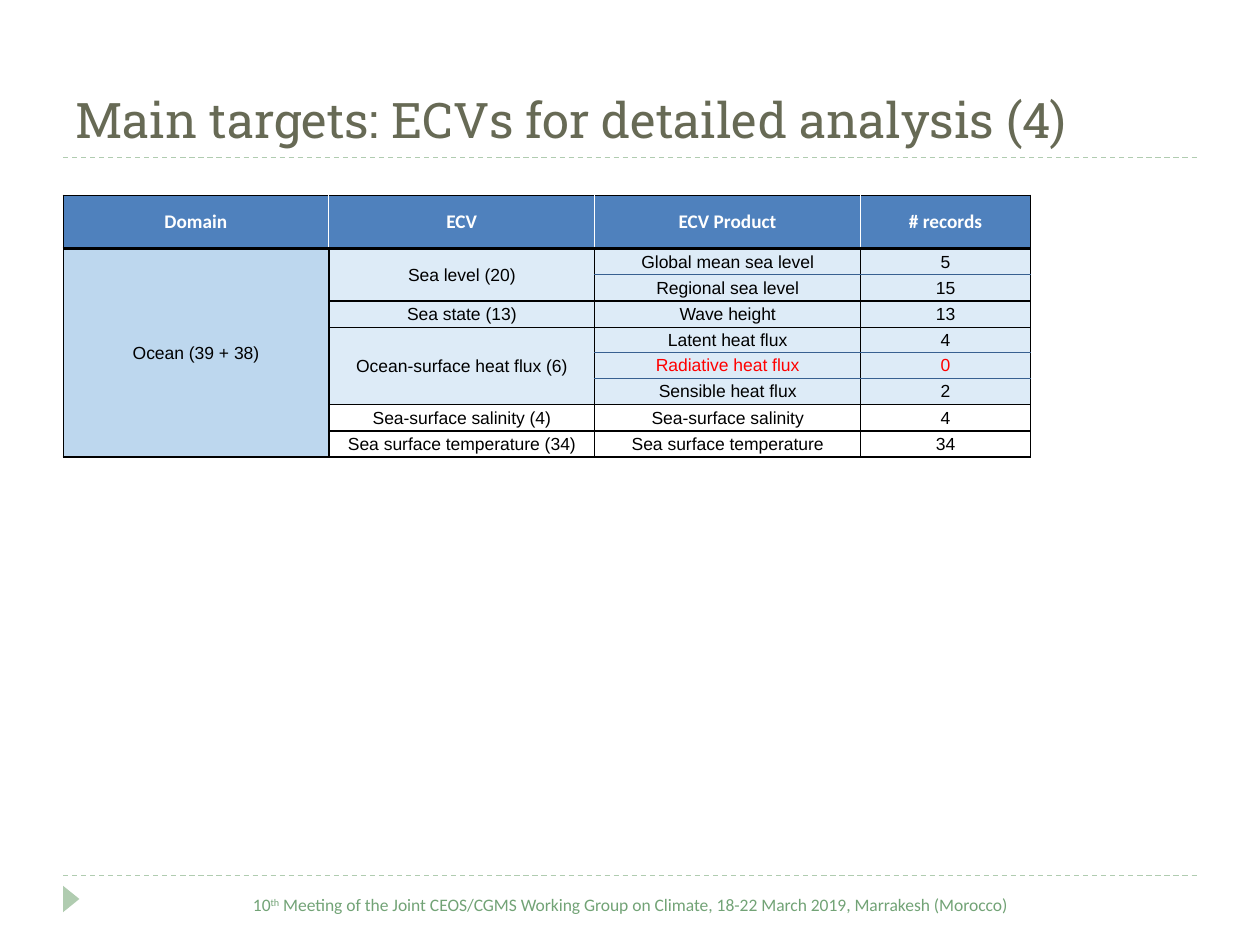
from lxml import etree
from pptx import Presentation
from pptx.dml.color import RGBColor
from pptx.enum.dml import MSO_LINE
from pptx.enum.shapes import MSO_CONNECTOR, MSO_SHAPE
from pptx.enum.text import MSO_ANCHOR, PP_ALIGN
from pptx.oxml.ns import qn
from pptx.util import Inches, Pt

STRAIGHT = MSO_CONNECTOR.STRAIGHT
TRIANGLE = MSO_SHAPE.ISOSCELES_TRIANGLE
DASH = MSO_LINE.DASH
TOP, MIDDLE, BOTTOM = MSO_ANCHOR.TOP, MSO_ANCHOR.MIDDLE, MSO_ANCHOR.BOTTOM
LEFT, CENTER = PP_ALIGN.LEFT, PP_ALIGN.CENTER

BLACK = RGBColor(0x00, 0x00, 0x00)
WHITE = RGBColor(0xFF, 0xFF, 0xFF)
RED = RGBColor(0xFF, 0x00, 0x00)
OLIVE = RGBColor(0x67, 0x6A, 0x55)
GREEN = RGBColor(0x72, 0xA3, 0x76)
PALE_GREEN = RGBColor(0xB0, 0xCC, 0xB0)
HEADER_BLUE = RGBColor(0x4F, 0x81, 0xBD)
DOMAIN_BLUE = RGBColor(0xBD, 0xD7, 0xEE)
BAND_BLUE = RGBColor(0xDD, 0xEB, 0xF7)
RULE_BLUE = RGBColor(0x37, 0x60, 0x91)

HEADERS = ["Domain", "ECV", "ECV Product", "# records"]
DOMAIN = "Ocean (39 + 38)"
GROUPS = [
    ("Sea level (20)", BAND_BLUE,
     [("Global mean sea level", "5"), ("Regional sea level", "15")]),
    ("Sea state (13)", BAND_BLUE, [("Wave height", "13")]),
    ("Ocean-surface heat flux (6)", BAND_BLUE,
     [("Latent heat flux", "4"), ("Radiative heat flux", "0"),
      ("Sensible heat flux", "2")]),
    ("Sea-surface salinity (4)", None, [("Sea-surface salinity", "4")]),
    ("Sea surface temperature (34)", None, [("Sea surface temperature", "34")]),
]
COLUMN_WIDTHS = [2.11, 2.11, 2.11, 1.35]
ROW_HEIGHTS = [0.42, 0.21, 0.21, 0.21, 0.2, 0.2, 0.21, 0.21, 0.21]


class SlideBuilder:
    formats = {
        "title": {"name": "Roboto Slab", "size": Pt(28)},
        "footer": {"name": "Calibri", "size": Pt(10)},
        "header": {"name": "Calibri", "size": Pt(11), "bold": True},
        "body": {"name": "Arial", "size": Pt(10), "bold": False},
    }

    def __init__(self, slide):
        self.slide = slide

    def add_runs(self, frame, runs, style, color, alignment):
        paragraph = frame.paragraphs[0]
        paragraph.alignment = alignment
        for text, baseline in runs:
            run = paragraph.add_run()
            run.text = text
            for name, value in self.formats[style].items():
                setattr(run.font, name, value)
            run.font.color.rgb = color
            if baseline:
                run._r.get_or_add_rPr().set("baseline", str(baseline * 1000))

    def text(self, box, runs, style, color, alignment=LEFT, anchor=TOP):
        shape = self.slide.shapes.add_textbox(*map(Inches, box))
        frame = shape.text_frame
        frame.word_wrap = True
        frame.vertical_anchor = anchor
        self.add_runs(frame, runs, style, color, alignment)

    def dashed_rule(self, left, right, top):
        connector = self.slide.shapes.add_connector(
            STRAIGHT, Inches(left), Inches(top), Inches(right), Inches(top))
        connector.line.color.rgb = PALE_GREEN
        connector.line.width = Pt(0.75)
        connector.line.dash_style = DASH
        etree.SubElement(connector._element.spPr, qn("a:effectLst"))

    def triangle(self, box, rotation):
        shape = self.slide.shapes.add_shape(TRIANGLE, *map(Inches, box))
        shape.rotation = rotation
        shape.shadow.inherit = False
        shape.fill.solid()
        shape.fill.fore_color.rgb = PALE_GREEN
        shape.line.fill.background()

    def table(self, left, top, widths, heights):
        frame = self.slide.shapes.add_table(
            len(heights), len(widths), Inches(left), Inches(top),
            Inches(sum(widths)), Inches(sum(heights)))
        table = frame.table
        table.first_row = False
        table.horz_banding = False
        for column, width in zip(table.columns, widths):
            column.width = Inches(width)
        for row, height in zip(table.rows, heights):
            row.height = Inches(height)
        return table

    def cell(self, cell, text, style, color, fill, borders):
        margins = {"margin_left": 0.01, "margin_right": 0.01,
                   "margin_top": 0.01, "margin_bottom": 0}
        for name, value in margins.items():
            setattr(cell, name, Inches(value))
        cell.vertical_anchor = MIDDLE
        self.add_runs(cell.text_frame, [(text, 0)], style, color, CENTER)
        properties = cell._tc.get_or_add_tcPr()
        for side, (border_color, width) in zip("LRTB", borders):
            line = etree.SubElement(properties, qn(f"a:ln{side}"), w=str(Pt(width)))
            solid = etree.SubElement(line, qn("a:solidFill"))
            etree.SubElement(solid, qn("a:srgbClr"), val=str(border_color))
        if fill is None:
            cell.fill.background()
        else:
            cell.fill.solid()
            cell.fill.fore_color.rgb = fill


def horizontal_border(edge, column, inner_edges):
    if edge == 1:
        return BLACK, 2
    if column > 1 and edge in inner_edges:
        return RULE_BLUE, 0.5
    return BLACK, 1


def vertical_border(edge, row):
    if row == 0 and 0 < edge < len(COLUMN_WIDTHS):
        return WHITE, 0.5
    return BLACK, 0.5 if edge == 0 else 1


def fill_table(builder, table):
    entries = [(0, column, 1, text, "header", WHITE, HEADER_BLUE)
               for column, text in enumerate(HEADERS)]
    entries.append((1, 0, len(ROW_HEIGHTS) - 1, DOMAIN, "body", BLACK, DOMAIN_BLUE))
    inner_edges = set()
    row = 1
    for name, fill, products in GROUPS:
        span = len(products)
        entries.append((row, 1, span, name, "body", BLACK, fill))
        inner_edges.update(range(row + 1, row + span))
        for product, records in products:
            color = RED if records == "0" else BLACK
            for column, text in enumerate((product, records), start=2):
                entries.append((row, column, 1, text, "body", color, fill))
            row += 1

    for row, column, span, text, style, color, fill in entries:
        cell = table.cell(row, column)
        if span > 1:
            cell.merge(table.cell(row + span - 1, column))
        borders = [vertical_border(column, row),
                   vertical_border(column + 1, row),
                   horizontal_border(row, column, inner_edges),
                   horizontal_border(row + span, column, inner_edges)]
        builder.cell(cell, text, style, color, fill, borders)


def main():
    presentation = Presentation()
    presentation.slide_width = Inches(10)
    presentation.slide_height = Inches(7.5)
    slide = presentation.slides.add_slide(presentation.slide_layouts[6])
    builder = SlideBuilder(slide)
    for top in (6.95, 1.25):
        builder.dashed_rule(0.5, 9.5, top)
    builder.triangle((0.46, 7.07, 0.21, 0.13), 90)
    builder.text((0.5, 0.15, 9, 1.08),
                 [("Main targets: ECVs for detailed analysis (4)", 0)],
                 "title", OLIVE, anchor=BOTTOM)
    builder.text((0.59, 7.05, 8.82, 0.4),
                 [("10", 0), ("th", 30),
                  (" Meeting of the Joint CEOS/CGMS Working Group on Climate, "
                   "18-22 March 2019, Marrakesh (Morocco)", 0)],
                 "footer", GREEN, CENTER)
    fill_table(builder, builder.table(0.5, 1.55, COLUMN_WIDTHS, ROW_HEIGHTS))
    presentation.save("out.pptx")


if __name__ == "__main__":
    main()
